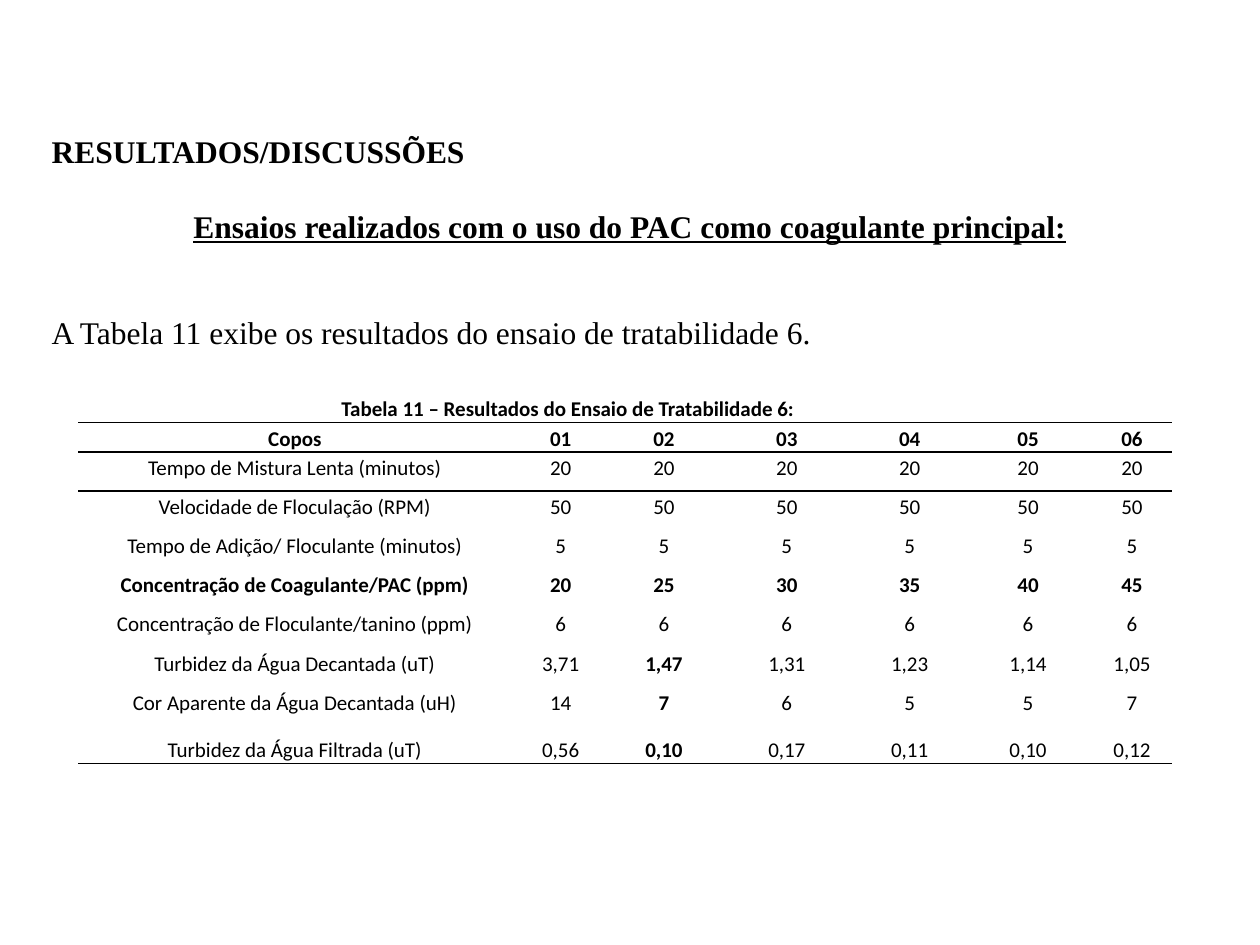
"""Build the slide with the results of treatability test 6."""
import dataclasses

import lxml.etree
import pptx
import pptx.dml.color
import pptx.enum.text
import pptx.oxml.ns
import pptx.util
from pptx.util import Inches


@dataclasses.dataclass(frozen=True)
class Theme:
    ink: str = "000000"
    heading_font: str = "Times New Roman"
    table_font: str = "Calibri"
    heading_size: int = 18
    table_size: int = 12
    rule_width: float = 1


theme = Theme()
ALIGN = pptx.enum.text.PP_ALIGN
qn = pptx.oxml.ns.qn


def style_runs(paragraph, font_name, size, bold, underline=False):
    for run in paragraph.runs:
        run.font.name = font_name
        run.font.size = pptx.util.Pt(size)
        run.font.bold = bold
        run.font.underline = underline
        run.font.color.rgb = pptx.dml.color.RGBColor.from_string(theme.ink)


def add_rule(cell, side):
    rule = lxml.etree.SubElement(cell._tc.get_or_add_tcPr(), qn(f"a:{side}"),
                                 w=str(pptx.util.Pt(theme.rule_width)))
    fill = lxml.etree.SubElement(rule, qn("a:solidFill"))
    lxml.etree.SubElement(fill, qn("a:srgbClr"), val=theme.ink)


presentation = pptx.Presentation()
presentation.slide_width = Inches(10)
presentation.slide_height = Inches(7.5)
slide = presentation.slides.add_slide(presentation.slide_layouts[1])

heading = slide.shapes.title
introduction = slide.placeholders[1]
for section, top, height in ((heading, 1, 0.4), (introduction, 1.59, 1.26)):
    section.left, section.top = Inches(0.31), Inches(top)
    section.width, section.height = Inches(9.38), Inches(height)
    section.text_frame.auto_size = pptx.enum.text.MSO_AUTO_SIZE.NONE
    section.text_frame.vertical_anchor = pptx.enum.text.MSO_ANCHOR.TOP

heading.text_frame.text = "RESULTADOS/DISCUSSÕES"
heading.text_frame.paragraphs[0].alignment = ALIGN.JUSTIFY
style_runs(heading.text_frame.paragraphs[0], theme.heading_font, theme.heading_size, True)

subtitle = introduction.text_frame.paragraphs[0]
subtitle.text = "Ensaios realizados com o uso do PAC como coagulante principal:"
lead_in = introduction.text_frame.add_paragraph()
lead_in.text = "A Tabela 11 exibe os resultados do ensaio de tratabilidade 6."
for paragraph, alignment, emphasis in ((subtitle, ALIGN.CENTER, True), (lead_in, ALIGN.LEFT, False)):
    properties = paragraph._p.get_or_add_pPr()
    properties.set("marL", "0")
    properties.set("indent", "0")
    lxml.etree.SubElement(properties, qn("a:buNone"))
    paragraph.alignment = alignment
    paragraph.space_before = pptx.util.Pt(0)
    style_runs(paragraph, theme.heading_font, theme.heading_size, emphasis, emphasis)
subtitle.space_after = pptx.util.Pt(39)

results = [
    ["Tabela 11 – Resultados do Ensaio de Tratabilidade 6:\t\t"] + [""] * 6,
    ["Copos", "01", "02", "03", "04", "05", "06"],
    ["Tempo de Mistura Lenta (minutos)"] + ["20"] * 6,
    ["Velocidade de Floculação (RPM)"] + ["50"] * 6,
    ["Tempo de Adição/ Floculante (minutos)"] + ["5"] * 6,
    ["Concentração de Coagulante/PAC (ppm)", "20", "25", "30", "35", "40", "45"],
    ["Concentração de Floculante/tanino (ppm)"] + ["6"] * 6,
    ["Turbidez da Água Decantada (uT)", "3,71", "1,47", "1,31", "1,23", "1,14", "1,05"],
    ["Cor Aparente da Água Decantada (uH)", "14", "7", "6", "5", "5", "7"],
    ["Turbidez da Água Filtrada (uT)", "0,56", "0,10", "0,17", "0,11", "0,10", "0,12"],
]
column_widths = [3.44, 0.78, 0.86, 1.09, 0.86, 1.02, 0.63]
row_heights = [0.23] * 2 + [0.31] * 6 + [0.38, 0.23]
caption_tabs = ((1.41, "l"), (3.08, "ctr"), (3.41, "l"))
bold_rows = (0, 1, 5)
best_cup, best_cup_rows = 2, (7, 8, 9)
rules_above, rules_below = (1, 2), (0, 1, 9)

table = slide.shapes.add_table(
    len(results), len(column_widths), Inches(0.62), Inches(3.12),
    Inches(sum(column_widths)), Inches(sum(row_heights))).table
table.first_row = False
table.horz_banding = False
table._tbl.tblPr.find(qn("a:tableStyleId")).text = "{2D5ABB26-0587-4C30-8999-92F81FD0307C}"
for column, width in zip(table.columns, column_widths):
    column.width = Inches(width)
for row, height in zip(table.rows, row_heights):
    row.height = Inches(height)
table.cell(0, 0).merge(table.cell(0, len(column_widths) - 1))

for row_index, values in enumerate(results):
    for column_index, value in enumerate(values):
        cell = table.cell(row_index, column_index)
        cell.margin_left = cell.margin_right = Inches(0.05)
        cell.margin_top = cell.margin_bottom = 0
        if row_index in rules_above:
            add_rule(cell, "lnT")
        if row_index in rules_below:
            add_rule(cell, "lnB")
        cell.fill.background()
        if cell.is_spanned:
            continue
        cell.text_frame.text = value
        entry = cell.text_frame.paragraphs[0]
        if cell.is_merge_origin:
            stops = lxml.etree.SubElement(entry._p.get_or_add_pPr(), qn("a:tabLst"))
            for position, kind in caption_tabs:
                lxml.etree.SubElement(stops, qn("a:tab"), pos=str(Inches(position)), algn=kind)
        entry.alignment = ALIGN.CENTER
        entry.line_spacing = 1.15
        entry.space_after = pptx.util.Pt(10)
        is_best = column_index == best_cup and row_index in best_cup_rows
        style_runs(entry, theme.table_font, theme.table_size, row_index in bold_rows or is_best)

presentation.save("out.pptx")
